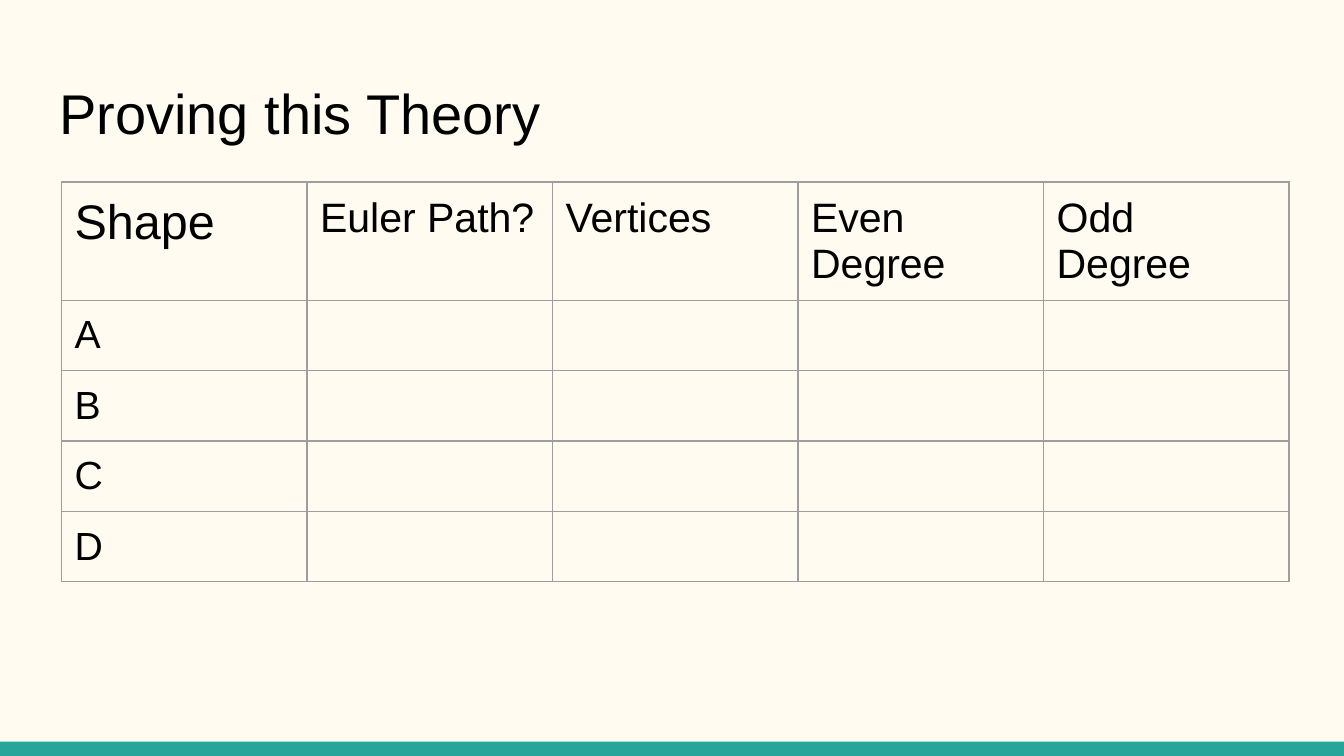
from dataclasses import dataclass

from lxml import etree
from pptx import Presentation
from pptx.dml.color import RGBColor
from pptx.enum.shapes import MSO_SHAPE
from pptx.enum.text import MSO_ANCHOR, PP_ALIGN
from pptx.oxml.ns import qn
from pptx.util import Cm, Pt

RECTANGLE = MSO_SHAPE.RECTANGLE
TOP = MSO_ANCHOR.TOP
LEFT = PP_ALIGN.LEFT


@dataclass(frozen=True)
class Theme:
    background: str = "FFFBF0"
    accent: str = "26A69A"
    text: str = "000000"
    grid: str = "9E9E9E"
    font: str = "Arial"
    title_size: int = 30
    lead_size: int = 26
    heading_size: int = 22
    label_size: int = 21
    grid_width: float = 0.75
    inset: float = 0.25


@dataclass(frozen=True)
class Entry:
    text: str
    size: int


THEME = Theme()
TITLE_ONLY = 5
SLIDE_WIDTH, SLIDE_HEIGHT = 25.4, 14.29
BAR_HEIGHT = 0.27
TABLE_LEFT, TABLE_TOP = 1.16, 3.44
COLUMN_WIDTH = 4.64
HEADING_HEIGHT, ROW_HEIGHT = 1.37, 1.33

HEADINGS = [Entry("Shape", THEME.lead_size)] + [
    Entry(text, THEME.heading_size)
    for text in ("Euler Path?", "Vertices", "Even Degree", "Odd Degree")
]
SHAPES = [Entry(letter, THEME.label_size) for letter in "ABCD"]


def format_text(frame, size: int) -> None:
    for paragraph in frame.paragraphs:
        paragraph.alignment = LEFT
        for run in paragraph.runs:
            run.font.name = THEME.font
            run.font.size = Pt(size)
            run.font.bold = False
            run.font.color.rgb = RGBColor.from_string(THEME.text)


def set_insets(target) -> None:
    target.margin_left = target.margin_right = Cm(THEME.inset)
    target.margin_top = target.margin_bottom = Cm(THEME.inset)


def add_borders(cell) -> None:
    properties = cell._tc.get_or_add_tcPr()
    for position, side in enumerate(("a:lnL", "a:lnR", "a:lnT", "a:lnB")):
        line = etree.Element(qn(side), w=str(Pt(THEME.grid_width)))
        fill = etree.SubElement(line, qn("a:solidFill"))
        etree.SubElement(fill, qn("a:srgbClr"), val=THEME.grid)
        properties.insert(position, line)


def fill_cell(cell, entry: Entry) -> None:
    cell.text_frame.text = entry.text
    format_text(cell.text_frame, entry.size)


def add_bottom_bar(slide) -> None:
    bar = slide.shapes.add_shape(
        RECTANGLE, 0, Cm(SLIDE_HEIGHT - BAR_HEIGHT), Cm(SLIDE_WIDTH), Cm(BAR_HEIGHT)
    )
    bar.shadow.inherit = False
    bar.fill.solid()
    bar.fill.fore_color.rgb = RGBColor.from_string(THEME.accent)
    bar.line.fill.background()


def add_title(slide, text: str) -> None:
    title = slide.shapes.title
    title.left, title.top = Cm(0.87), Cm(1.24)
    title.width, title.height = Cm(23.67), Cm(1.7)
    frame = title.text_frame
    frame.text = text
    frame.word_wrap = True
    frame.vertical_anchor = TOP
    set_insets(frame)
    format_text(frame, THEME.title_size)


def add_degree_table(slide, headings: list[Entry], labels: list[Entry]) -> None:
    columns, rows = len(headings), len(labels) + 1
    table = slide.shapes.add_table(
        rows, columns, Cm(TABLE_LEFT), Cm(TABLE_TOP),
        Cm(columns * COLUMN_WIDTH), Cm(HEADING_HEIGHT + len(labels) * ROW_HEIGHT),
    ).table
    table.first_row = table.horz_banding = False
    for column in table.columns:
        column.width = Cm(COLUMN_WIDTH)
    for index, row in enumerate(table.rows):
        row.height = Cm(ROW_HEIGHT if index else HEADING_HEIGHT)
    for cell in table.iter_cells():
        set_insets(cell)
        cell.fill.background()
        add_borders(cell)
    for index, heading in enumerate(headings):
        fill_cell(table.cell(0, index), heading)
    for index, label in enumerate(labels, start=1):
        fill_cell(table.cell(index, 0), label)


def main() -> None:
    presentation = Presentation()
    presentation.slide_width = Cm(SLIDE_WIDTH)
    presentation.slide_height = Cm(SLIDE_HEIGHT)
    slide = presentation.slides.add_slide(presentation.slide_layouts[TITLE_ONLY])

    # Background and accent bar
    slide.background.fill.solid()
    slide.background.fill.fore_color.rgb = RGBColor.from_string(THEME.background)
    add_bottom_bar(slide)

    # Title and table of shapes to fill in
    add_title(slide, "Proving this Theory")
    add_degree_table(slide, HEADINGS, SHAPES)

    presentation.save("out.pptx")


if __name__ == "__main__":
    main()
